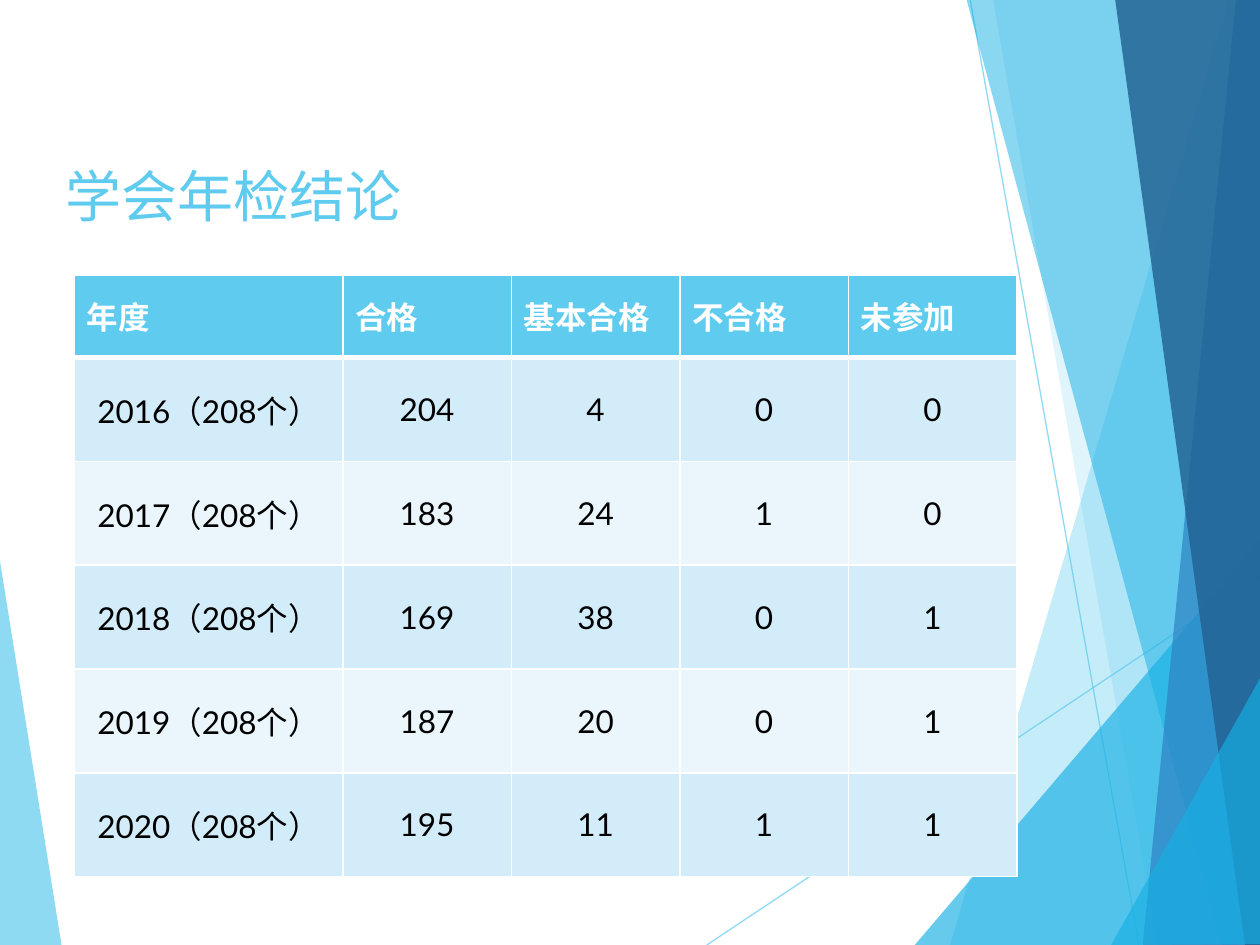
"""Build the slide with the yearly inspection results of the societies."""
from pptx import Presentation
from pptx.dml.color import RGBColor
from pptx.enum.shapes import MSO_CONNECTOR
from pptx.enum.text import MSO_ANCHOR, PP_ALIGN
from pptx.oxml.ns import qn
from pptx.util import Pt
from lxml.etree import SubElement

FONT = "Lato"
SKY = RGBColor(0x5F, 0xCB, 0xEF)
CYAN = RGBColor(0x17, 0xB0, 0xE4)
BLUE = RGBColor(0x2E, 0x83, 0xC3)
NAVY = RGBColor(0x22, 0x62, 0x92)
BAND_DARK = RGBColor(0xD2, 0xEC, 0xF9)
BAND_LIGHT = RGBColor(0xEA, 0xF6, 0xFC)
WHITE = RGBColor(0xFF, 0xFF, 0xFF)
BLACK = RGBColor(0x00, 0x00, 0x00)

LEFT_WEDGE = (SKY, 70, [(-0.7, 316.1), (35.3, 540.7), (-0.7, 540)])
RIGHT_FACETS = [
    (SKY, 36, [(702, 0), (542.9, 540), (721.4, 540.7), (720.7, 0.7)]),
    (SKY, 20, [(567.4, -0.7), (661.7, 540), (720.7, 540), (720.7, -0.7)]),
    (CYAN, 66, [(522.7, 540), (720, 308.9), (720.7, 540)]),
    (CYAN, 50, [(552.2, -0.7), (698.4, 540), (720.7, 539.3), (720.7, -0.7)]),
    (BLUE, 70, [(706.3, -0.7), (653, 540), (720.7, 540), (720, -0.7)]),
    (NAVY, 82, [(637.2, -0.7), (711.4, 540), (721.4, 540), (720, -0.7)]),
    (CYAN, 66, [(635, 540), (721.4, 385.2), (721.4, 539.3)]),
]
RAYS = [(403.9, 540, 720.7, 329), (554.4, 0, 650.9, 540)]
ROWS = [
    ("年度", "合格", "基本合格", "不合格", "未参加"),
    ("2016（208个）", "204", "4", "0", "0"),
    ("2017（208个）", "183", "24", "1", "0"),
    ("2018（208个）", "169", "38", "0", "1"),
    ("2019（208个）", "187", "20", "0", "1"),
    ("2020（208个）", "195", "11", "1", "1"),
]
COL_WIDTHS = [153.4] + [96.3] * 4
ROW_HEIGHT = 47.3


def set_alpha(sp, percent):
    clr = next(sp.element.spPr.iter(qn("a:srgbClr")))
    SubElement(clr, qn("a:alpha"), val=str(percent * 1000))


def add_facet(shapes, color, opacity, points):
    corners = [(Pt(x), Pt(y)) for x, y in points]
    builder = shapes.build_freeform(*corners[0])
    builder.add_line_segments(corners[1:], close=True)
    sp = builder.convert_to_shape()
    sp.shadow.inherit = False
    sp.fill.solid()
    sp.fill.fore_color.rgb = color
    sp.line.fill.background()
    set_alpha(sp, opacity)


prs = Presentation()
prs.slide_width, prs.slide_height = Pt(720), Pt(540)
s = prs.slides.add_slide(prs.slide_layouts[5])

add_facet(s.shapes, *LEFT_WEDGE)
for ray in RAYS:
    line = s.shapes.add_connector(MSO_CONNECTOR.STRAIGHT, *map(Pt, ray))
    line.line.color.rgb = SKY
    line.line.width = Pt(0.75)
    set_alpha(line, 70)
    SubElement(line.element.spPr, qn("a:effectLst"))
for facet in RIGHT_FACETS:
    add_facet(s.shapes, *facet)

title = s.shapes.title
title.element.getparent().append(title.element)
title.left, title.top, title.width, title.height = Pt(30.2), Pt(88.6), Pt(648), Pt(56.9)
tf = title.text_frame
tf.vertical_anchor = MSO_ANCHOR.TOP
p = tf.paragraphs[0]
p.alignment = PP_ALIGN.LEFT
r = p.add_run()
r.text = "学会年检结论"
r.font.name = FONT
r.font.size = Pt(32)
r.font.color.rgb = SKY

table = s.shapes.add_table(
    len(ROWS), len(COL_WIDTHS), Pt(42.5), Pt(157),
    Pt(sum(COL_WIDTHS)), Pt(ROW_HEIGHT * len(ROWS)),
).table
for col, width in zip(table.columns, COL_WIDTHS):
    col.width = Pt(width)
for i, values in enumerate(ROWS):
    header = i == 0
    table.rows[i].height = Pt(ROW_HEIGHT)
    for j, value in enumerate(values):
        cell = table.cell(i, j)
        cell.vertical_anchor = MSO_ANCHOR.MIDDLE
        tc_pr = cell._tc.get_or_add_tcPr()
        for side in "LRTB":
            thick = (header and side == "B") or (i == 1 and side == "T")
            ln = SubElement(tc_pr, qn(f"a:ln{side}"), w=str(Pt(3 if thick else 1)))
            fill = SubElement(ln, qn("a:solidFill"))
            SubElement(fill, qn("a:srgbClr"), val=str(WHITE))
        cell.fill.solid()
        cell.fill.fore_color.rgb = SKY if header else BAND_DARK if i % 2 else BAND_LIGHT
        p = cell.text_frame.paragraphs[0]
        p.alignment = PP_ALIGN.LEFT if header else PP_ALIGN.CENTER
        r = p.add_run()
        r.text = value
        r.font.name = FONT
        r.font.size = Pt(18)
        r.font.bold = header
        r.font.color.rgb = WHITE if header else BLACK

prs.save("out.pptx")
